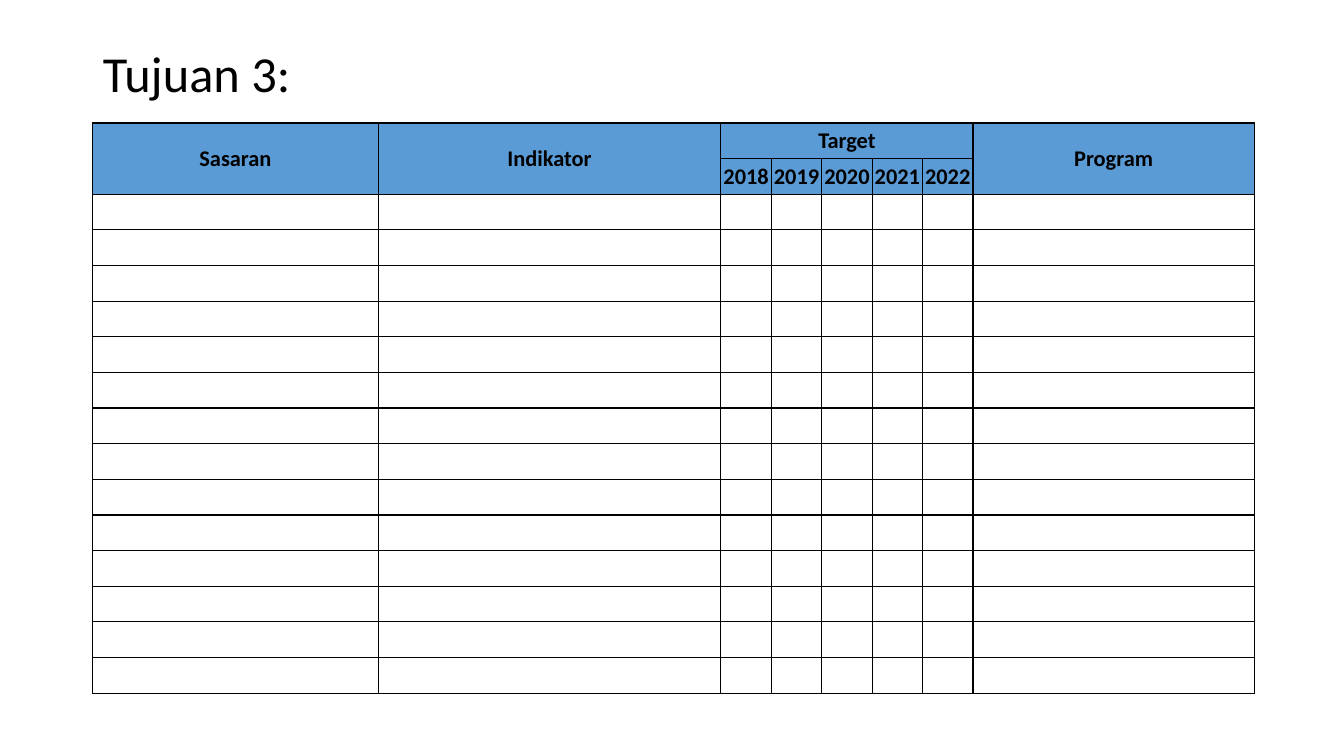
from lxml import etree
from pptx import Presentation
from pptx.dml.color import RGBColor
from pptx.enum.text import MSO_ANCHOR as ANCHOR, PP_ALIGN as ALIGN
from pptx.oxml.ns import qn
from pptx.util import Inches, Pt

# Content
TITLE = "Tujuan 3:"
YEARS = ["2018", "2019", "2020", "2021", "2022"]
HEADERS = [  # text, row, column, rows spanned, columns spanned
    ("Sasaran", 0, 0, 2, 1),
    ("Indikator", 0, 1, 2, 1),
    ("Target", 0, 2, 1, len(YEARS)),
    ("Program", 0, 2 + len(YEARS), 2, 1),
] + [(year, 1, 2 + i, 1, 1) for i, year in enumerate(YEARS)]

# Layout and formats
LEFT, WIDTH = 0.92, 11.5
TABLE_TOP, TABLE_HEIGHT = 1.22, 5.66
HEADER_ROWS, BLANK_ROWS = 2, 14
COL_WIDTHS = [2.83, 3.4] + [0.5] * len(YEARS) + [2.79]
BLACK, BLUE = "000000", "5B9BD5"
TITLE_FONT = {"name": "Calibri", "size": Pt(36), "bold": False}
HEADER_FONT = {"name": "Calibri", "size": Pt(16), "bold": True}
CELL_FORMAT = {
    "margin_left": Inches(0.01), "margin_right": Inches(0.01),
    "margin_top": Inches(0.01), "margin_bottom": 0,
    "vertical_anchor": ANCHOR.MIDDLE,
}


def rgb(color):
    return RGBColor.from_string(color)


def set_attrs(obj, values):
    for name, value in values.items():
        setattr(obj, name, value)


def write(p, text, font, align):
    p.alignment = align
    r = p.add_run()
    r.text = text
    set_attrs(r.font, font)
    r.font.color.rgb = rgb(BLACK)


def add_borders(cell, color, width):
    tc_pr = cell._tc.get_or_add_tcPr()
    for side in ("lnL", "lnR", "lnT", "lnB"):
        ln = etree.SubElement(tc_pr, qn(f"a:{side}"), w=str(Pt(width)))
        fill = etree.SubElement(ln, qn("a:solidFill"))
        etree.SubElement(fill, qn("a:srgbClr"), val=color)


prs = Presentation()
prs.slide_width, prs.slide_height = Inches(13.33), Inches(7.5)
s = prs.slides.add_slide(prs.slide_layouts[5])

# Title
title = s.shapes.title
set_attrs(title, {"left": Inches(LEFT), "top": Inches(0.4),
                  "width": Inches(WIDTH), "height": Inches(0.71)})
tf = title.text_frame
tf.vertical_anchor = ANCHOR.MIDDLE
p = tf.paragraphs[0]
p.line_spacing = 0.9
write(p, TITLE, TITLE_FONT, ALIGN.LEFT)

# Table grid
row_count = HEADER_ROWS + BLANK_ROWS
table = s.shapes.add_table(
    row_count, len(COL_WIDTHS), Inches(LEFT), Inches(TABLE_TOP),
    Inches(WIDTH), Inches(TABLE_HEIGHT)).table
table.first_row = table.horz_banding = False
for col, width in zip(table.columns, COL_WIDTHS):
    col.width = Inches(width)
for i, row in enumerate(table.rows):
    row.height = Inches(TABLE_HEIGHT / row_count)
    for cell in row.cells:
        set_attrs(cell, CELL_FORMAT)
        add_borders(cell, BLACK, 1)
        if i < HEADER_ROWS:
            cell.fill.solid()
            cell.fill.fore_color.rgb = rgb(BLUE)
        else:
            cell.fill.background()

# Header cells
for text, row, col, row_span, col_span in HEADERS:
    cell = table.cell(row, col)
    if row_span * col_span > 1:
        cell.merge(table.cell(row + row_span - 1, col + col_span - 1))
    write(cell.text_frame.paragraphs[0], text, HEADER_FONT, ALIGN.CENTER)

prs.save("out.pptx")
